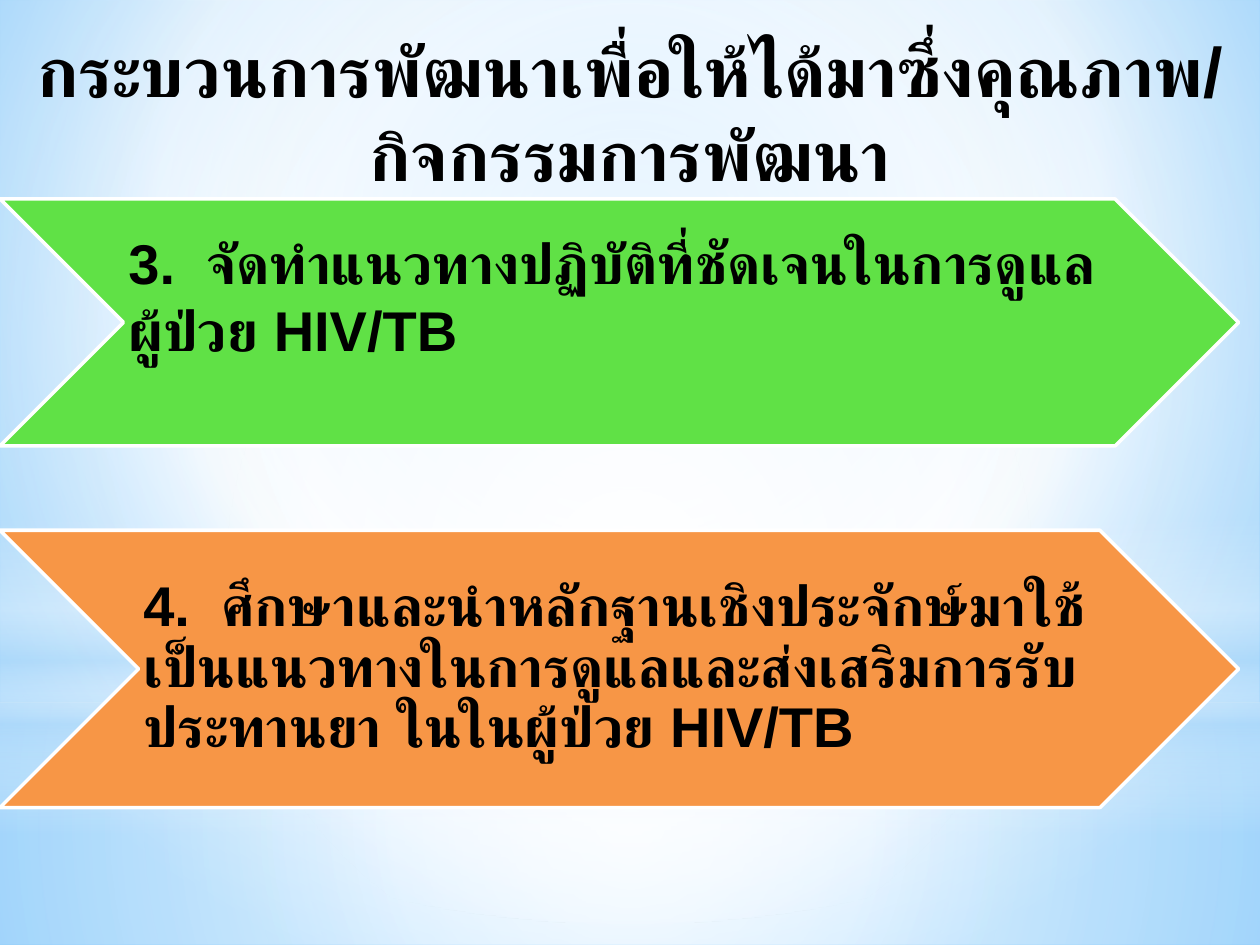
from dataclasses import dataclass
from lxml import etree
from pptx import Presentation
from pptx.dml.color import RGBColor
from pptx.enum.shapes import MSO_SHAPE
from pptx.enum.text import MSO_ANCHOR, PP_ALIGN
from pptx.oxml.ns import qn
from pptx.util import Cm, Pt

RECT, OVAL = MSO_SHAPE.RECTANGLE, MSO_SHAPE.OVAL
ARROW = MSO_SHAPE.CHEVRON
TOP, MIDDLE = MSO_ANCHOR.TOP, MSO_ANCHOR.MIDDLE
LEFT, CENTER = PP_ALIGN.LEFT, PP_ALIGN.CENTER


@dataclass
class Theme:
    font: str = "Arial"
    ink: str = "000000"
    white: str = "FFFFFF"
    mist: str = "B4DCFA"
    sky: str = "9ED5FF"
    blue: str = "5BB9FF"
    green: str = "60E146"
    orange: str = "F79646"
    head: int = 40
    body: int = 32


theme = Theme()


def paint(fill, root, stops, focus):
    fill.gradient()
    grad = root.find(".//" + qn("a:gradFill"))
    grad.clear()
    grad.set("rotWithShape", "1")
    group = etree.SubElement(grad, qn("a:gsLst"))
    for place, color, alpha in stops:
        stop = etree.SubElement(group, qn("a:gs"), pos=str(place * 1000))
        tone = etree.SubElement(stop, qn("a:srgbClr"), val=color)
        etree.SubElement(tone, qn("a:alpha"), val=str(alpha * 1000))
    if focus:
        route = etree.SubElement(grad, qn("a:path"))
        route.set("path", "circle")
        sides = {side: str(part * 1000) for side, part in zip("ltrb", focus)}
        etree.SubElement(route, qn("a:fillToRect"), **sides)
    else:
        etree.SubElement(grad, qn("a:lin"), ang="5400000", scaled="0")


def write(box, text, size, align, anchor, insets, leading):
    frame = box.text_frame
    frame.word_wrap = True
    frame.vertical_anchor = anchor
    (frame.margin_left, frame.margin_top,
     frame.margin_right, frame.margin_bottom) = [Cm(gap) for gap in insets]
    frame.text = text
    para = frame.paragraphs[0]
    para.alignment = align
    para.line_spacing = leading
    for run in para.runs:
        font = run.font
        font.name = theme.font
        font.size = Pt(size)
        font.bold = True
        font.color.rgb = RGBColor.from_string(theme.ink)
        etree.SubElement(font._element, qn("a:cs"), typeface=theme.font)


deck = Presentation()
deck.slide_width, deck.slide_height = Cm(25.4), Cm(19.05)
slide = deck.slides.add_slide(deck.slide_layouts[6])
shapes = slide.shapes

paint(slide.background.fill, slide._element,
      [(0, theme.sky, 100), (60, theme.white, 100), (100, theme.blue, 100)],
      (20, 10, 20, 60))

mid = (50, 50, 50, 50)
layers = [
    (RECT, 14.17, 4.88, mid,
     [(0, theme.white, 91), (37, theme.white, 76), (100, theme.mist, 79)]),
    (RECT, 0, 14.17, mid,
     [(0, theme.white, 89), (48, theme.white, 62), (100, theme.mist, 79)]),
    (RECT, 10.46, 6.35, None,
     [(0, theme.white, 0), (29, theme.white, 30), (45, theme.mist, 40),
      (55, theme.white, 26), (65, theme.mist, 60), (100, theme.white, 0)]),
    (OVAL, 4.45, 14.17, mid,
     [(0, theme.white, 100), (56, theme.white, 0)]),
]
for kind, top, height, focus, stops in layers:
    glow = shapes.add_shape(kind, 0, Cm(top), deck.slide_width, Cm(height))
    glow.shadow.inherit = False
    glow.line.fill.background()
    paint(glow.fill, glow._element, stops, focus)

steps = [
    (10.69, 5.59, 2.79, 19.38, theme.orange, 0.05, 0.9,
     "4.  ศึกษาและนำหลักฐานเชิงประจักษ์มาใช้เป็นแนวทางในการดูแลและส่งเสริมการรับประทานยา ในในผู้ป่วย HIV/TB"),
    (4.01, 4.98, 2.49, 19.99, theme.green, 1.12, 1,
     "3.  จัดทำแนวทางปฏิบัติที่ชัดเจนในการดูแลผู้ป่วย HIV/TB"),
]
for top, height, left, width, color, base, leading, text in steps:
    arrow = shapes.add_shape(ARROW, 0, Cm(top), Cm(24.97), Cm(height))
    arrow.shadow.inherit = False
    arrow.fill.solid()
    arrow.fill.fore_color.rgb = RGBColor.from_string(color)
    arrow.line.color.rgb = RGBColor.from_string(theme.white)
    arrow.line.width = Pt(2)
    label = shapes.add_textbox(Cm(left), Cm(top), Cm(width), Cm(height))
    write(label, text, theme.body, LEFT, MIDDLE, (0.1, 0.05, 0, base), leading)

title = shapes.add_textbox(0, Cm(0.43), deck.slide_width, Cm(4.24))
write(title, "กระบวนการพัฒนาเพื่อให้ได้มาซึ่งคุณภาพ/กิจกรรมการพัฒนา",
      theme.head, CENTER, TOP, (0.25, 0.13, 0.25, 0.13), 1)

deck.save("out.pptx")
